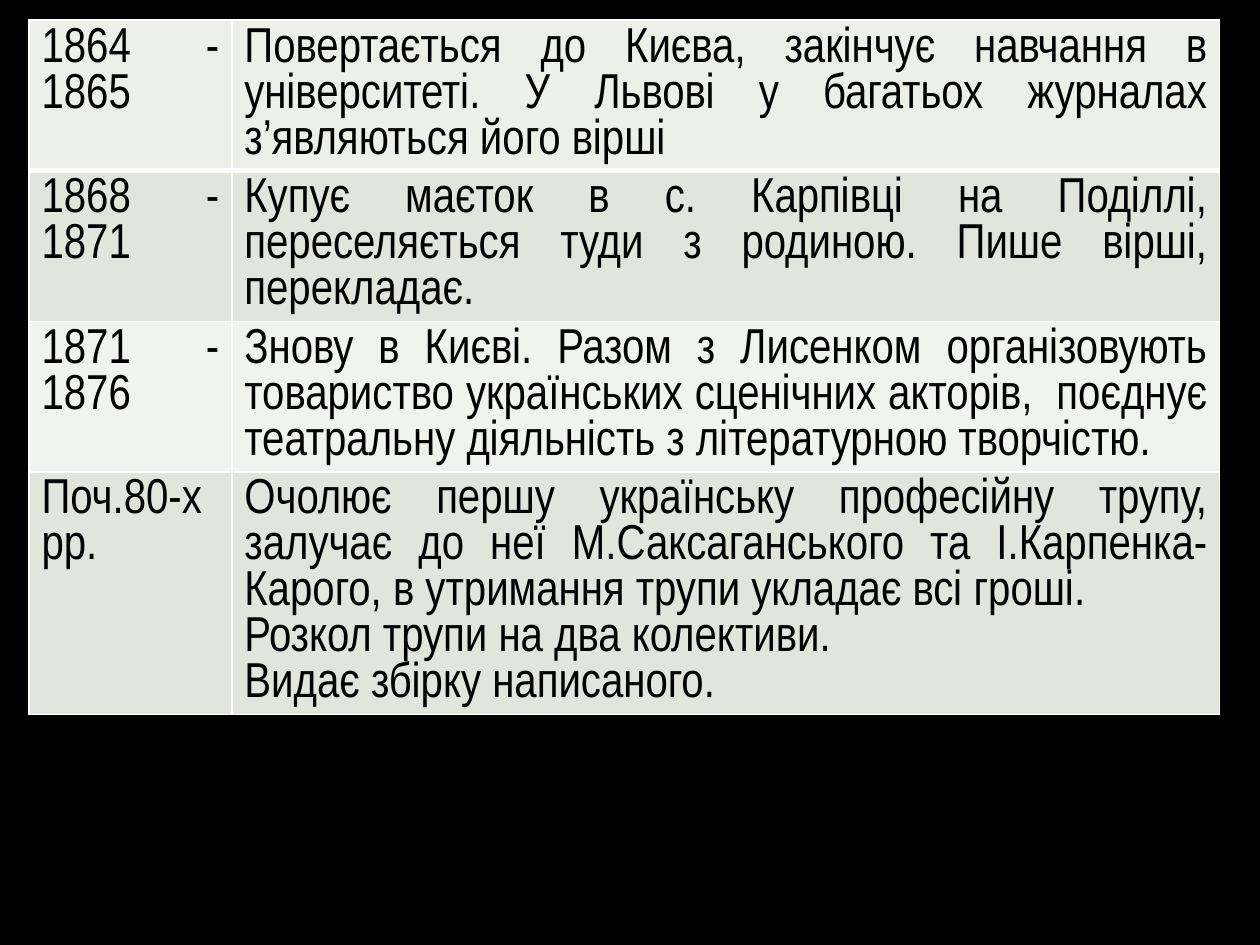
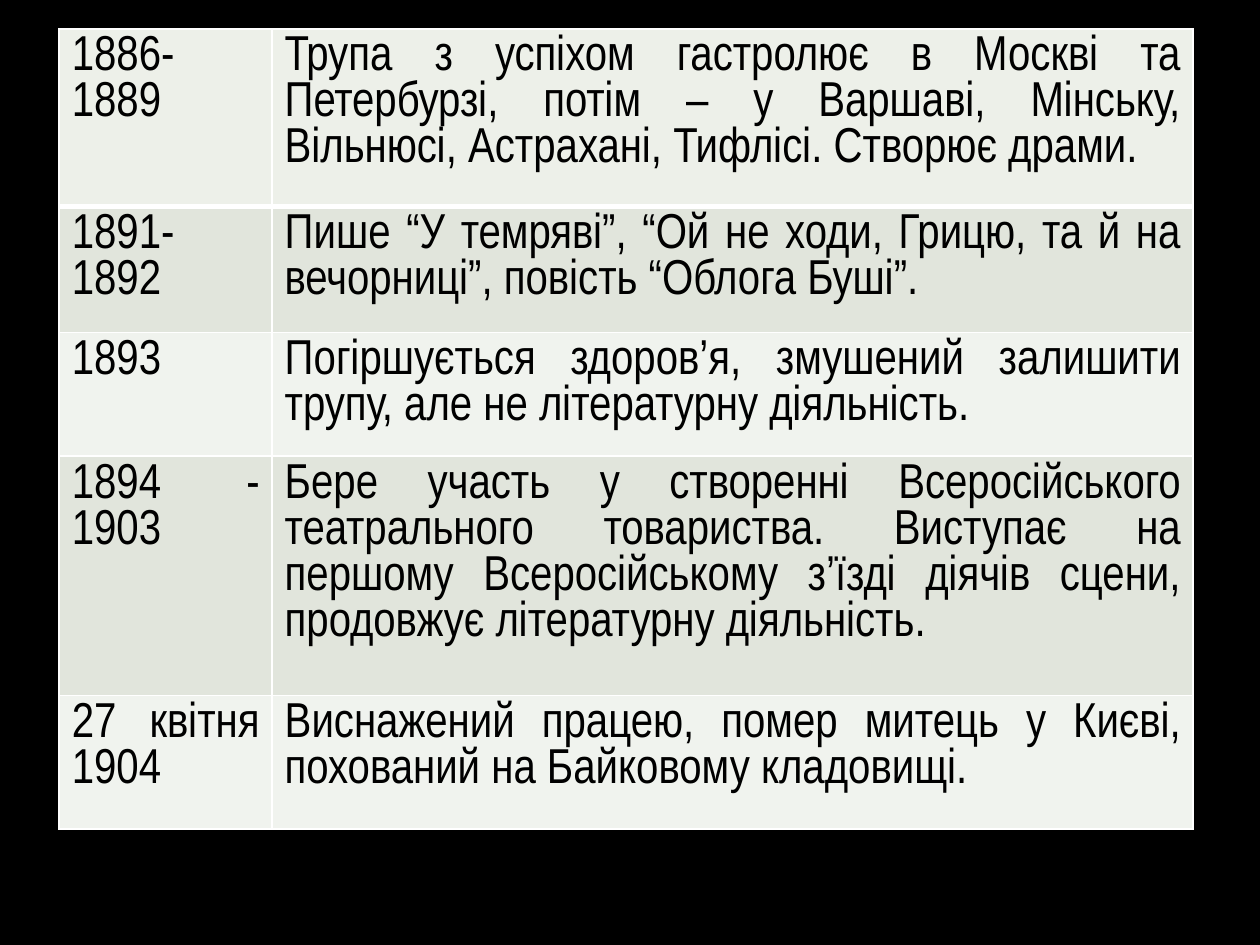
from lxml import etree
from pptx import Presentation
from pptx.dml.color import RGBColor
from pptx.enum import text
from pptx.oxml import ns
from pptx.util import Inches, Pt

BLACK = RGBColor(0x00, 0x00, 0x00)
WHITE = RGBColor(0xFF, 0xFF, 0xFF)
FIRST_ROW = RGBColor(0xED, 0xF0, 0xE9)
DARK_BAND = RGBColor(0xE1, 0xE5, 0xDC)
LIGHT_BAND = RGBColor(0xF0, 0xF3, 0xEE)
FONT, FONT_SIZE = "Arial Narrow", Pt(28)
THIN, THICK = Pt(1), Pt(3)

YEARS_1864_1880S = [
    ("1864 - 1865", "Повертається до Києва, закінчує навчання в університеті. "
     "У Львові у багатьох журналах з’являються його вірші"),
    ("1868 - 1871", "Купує маєток в с. Карпівці на Поділлі, переселяється туди "
     "з родиною. Пише вірші, перекладає."),
    ("1871 - 1876", "Знову в Києві. Разом з Лисенком організовують товариство "
     "українських сценічних акторів,  поєднує театральну діяльність "
     "з літературною творчістю."),
    ("Поч.80-х рр.", "Очолює першу українську професійну трупу, залучає до неї "
     "М.Саксаганського та І.Карпенка-Карого, в утримання трупи укладає всі гроші.\n"
     "Розкол трупи на два колективи.\n"
     "Видає збірку написаного."),
]
YEARS_1886_1904 = [
    ("1886-1889", "Трупа з успіхом гастролює в Москві та Петербурзі, потім – "
     "у Варшаві, Мінську, Вільнюсі, Астрахані, Тифлісі. Створює драми."),
    ("1891-1892", "Пише “У темряві”, “Ой не ходи, Грицю, та й на вечорниці”, "
     "повість “Облога Буші”."),
    ("1893", "Погіршується здоров’я, змушений залишити трупу, "
     "але не літературну діяльність."),
    ("1894 - 1903", "Бере участь у створенні Всеросійського театрального "
     "товариства. Виступає на першому Всеросійському з’їзді діячів сцени, "
     "продовжує літературну діяльність."),
    ("27 квітня 1904", "Виснажений працею, помер митець у Києві, "
     "похований на Байковому кладовищі."),
]


def add_black_slide(deck):
    """Add a blank slide with a black background."""
    slide = deck.slides.add_slide(deck.slide_layouts[6])
    background = slide.background.fill
    background.solid()
    background.fore_color.rgb = BLACK
    return slide


def set_borders(cell, top, bottom):
    """Draw white borders of the given top and bottom widths around a cell."""
    properties = cell._tc.get_or_add_tcPr()
    for side, width in (("L", THIN), ("R", THIN), ("T", top), ("B", bottom)):
        line = etree.SubElement(properties, ns.qn(f"a:ln{side}"), w=str(width))
        fill = etree.SubElement(line, ns.qn("a:solidFill"))
        etree.SubElement(fill, ns.qn("a:srgbClr"), val=str(WHITE))


def band_color(row_index):
    """Return the fill of a row: a special first row, then alternating bands."""
    if row_index == 0:
        return FIRST_ROW
    return DARK_BAND if row_index % 2 else LIGHT_BAND


def fill_cell(cell, content, row_index):
    """Write justified text into a cell and style it for its row."""
    set_borders(cell, THICK if row_index == 1 else THIN,
                THICK if row_index == 0 else THIN)
    cell.fill.solid()
    cell.fill.fore_color.rgb = band_color(row_index)
    cell.text = content
    for paragraph in cell.text_frame.paragraphs:
        paragraph.alignment = text.PP_ALIGN.JUSTIFY
        paragraph.font.name = FONT
        paragraph.font.size = FONT_SIZE
        paragraph.font.color.rgb = BLACK


def add_chronicle(slide, events, left, top, column_widths, row_heights):
    """Add a table of dates and life events."""
    table = slide.shapes.add_table(
        len(events), len(column_widths), Inches(left), Inches(top),
        Inches(sum(column_widths)), Inches(sum(row_heights))).table
    table.first_row = table.horz_banding = False
    for column, width in zip(table.columns, column_widths):
        column.width = Inches(width)
    for row_index, (event, height) in enumerate(zip(events, row_heights)):
        row = table.rows[row_index]
        row.height = Inches(height)
        for cell, content in zip(row.cells, event):
            fill_cell(cell, content, row_index)


def main():
    """Build both chronicle slides and save the deck."""
    deck = Presentation()
    deck.slide_width, deck.slide_height = Inches(10), Inches(7.5)
    add_chronicle(add_black_slide(deck), YEARS_1864_1880S, 0.23, 0.16,
                  (1.61, 7.84), [0.41] * len(YEARS_1864_1880S))
    add_chronicle(add_black_slide(deck), YEARS_1886_1904, 0.47, 0.23,
                  (1.69, 7.31), (1.41, 1, 0.98, 1.9, 1.06))
    deck.save("out.pptx")


if __name__ == "__main__":
    main()
